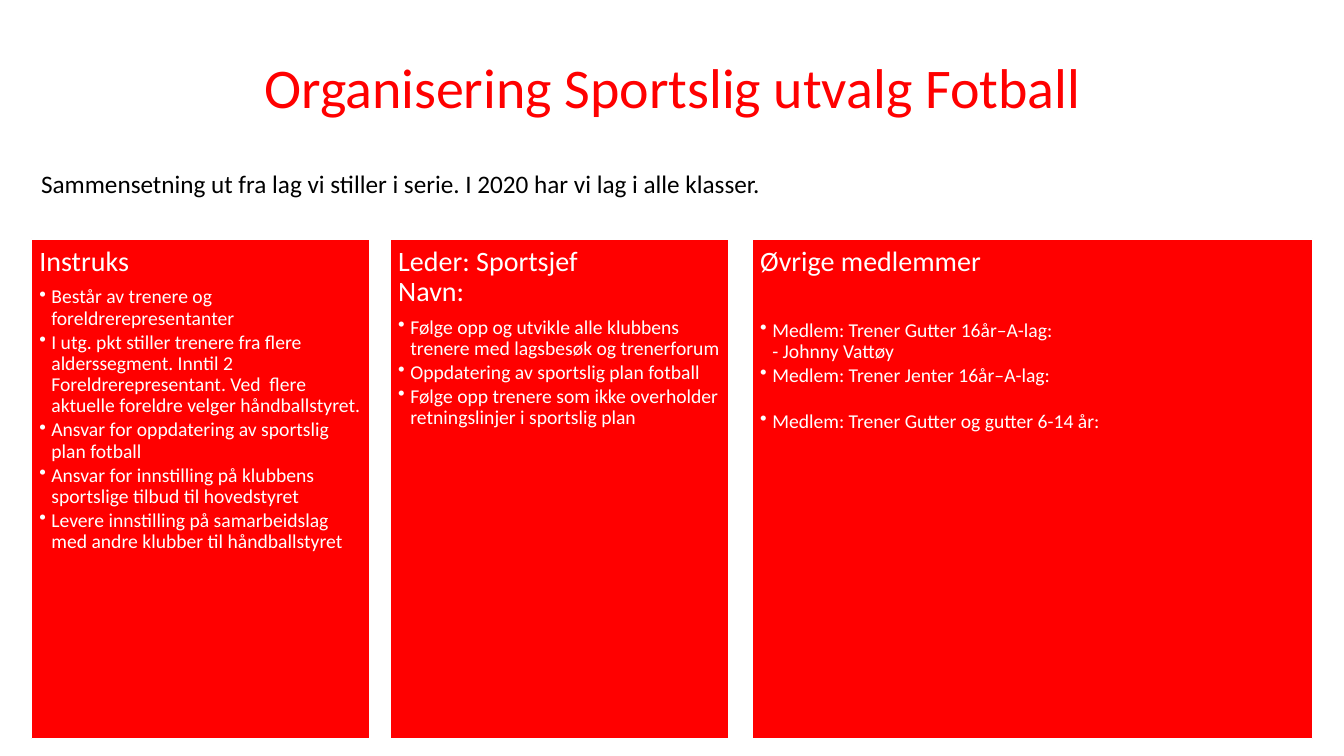
import pptx
import pptx.util
import pptx.dml.color
import pptx.enum.shapes
import pptx.enum.text
import pptx.oxml.ns
from lxml import etree

Inches, Pt = pptx.util.Inches, pptx.util.Pt
qn = pptx.oxml.ns.qn
ALIGN = pptx.enum.text.PP_ALIGN
ANCHOR = pptx.enum.text.MSO_ANCHOR

RED = pptx.dml.color.RGBColor(0xFF, 0x00, 0x00)
WHITE = pptx.dml.color.RGBColor(0xFF, 0xFF, 0xFF)
BLACK = pptx.dml.color.RGBColor(0x00, 0x00, 0x00)

PANEL_TOP, PANEL_HEIGHT = 2.37, 4.96
PANELS = [
    (0.31, 3.36, "Instruks", [
        "Består av trenere og foreldrerepresentanter",
        "I utg. pkt stiller trenere fra flere alderssegment. Inntil 2 "
        "Foreldrerepresentant. Ved  flere aktuelle foreldre velger håndballstyret.",
        "Ansvar for oppdatering av sportslig plan fotball",
        "Ansvar for innstilling på klubbens sportslige tilbud til hovedstyret",
        "Levere innstilling på samarbeidslag med andre klubber til håndballstyret",
    ]),
    (3.87, 3.36, "Leder: Sportsjef\nNavn:", [
        "Følge opp og utvikle alle klubbens trenere med lagsbesøk og trenerforum",
        "Oppdatering av sportslig plan fotball",
        "Følge opp trenere som ikke overholder retningslinjer i sportslig plan",
    ]),
    (7.46, 5.56, "Øvrige medlemmer\n", [
        "Medlem: Trener Gutter 16år–A-lag:\n- Johnny Vattøy",
        "Medlem: Trener Jenter 16år–A-lag:\n",
        "Medlem: Trener Gutter og gutter 6-14 år:",
    ]),
]


def write(paragraph, text, size, color, **layout):
    """Fill a paragraph; line breaks get the same size as the text."""
    paragraph.text = text
    for run in paragraph.runs:
        run.font.name = "Calibri"
        run.font.size = Pt(size)
        run.font.color.rgb = color
    for line_break in paragraph._p.findall(qn("a:br")):
        etree.SubElement(line_break, qn("a:rPr"), sz=str(size * 100))
    etree.SubElement(paragraph._p, qn("a:endParaRPr"), sz=str(size * 100))
    for key, value in layout.items():
        setattr(paragraph, key, value)


def add_bullet(paragraph):
    properties = paragraph._p.get_or_add_pPr()
    properties.set("marL", str(Inches(0.12)))
    properties.set("indent", str(-Inches(0.12)))
    etree.SubElement(properties, qn("a:buChar"), char="•")


deck = pptx.Presentation()
deck.slide_width, deck.slide_height = Inches(13.33), Inches(7.5)
slide = deck.slides.add_slide(deck.slide_layouts[6])

title = slide.shapes.add_textbox(
    Inches(0.92), Inches(0.17), Inches(11.5), Inches(1.45)).text_frame
title.word_wrap = True
title.vertical_anchor = ANCHOR.MIDDLE
write(title.paragraphs[0], "Organisering Sportslig utvalg Fotball", 40, RED,
      alignment=ALIGN.CENTER, line_spacing=0.9)

for left, width, heading, duties in PANELS:
    panel = slide.shapes.add_shape(
        pptx.enum.shapes.MSO_SHAPE.RECTANGLE,
        Inches(left), Inches(PANEL_TOP), Inches(width), Inches(PANEL_HEIGHT))
    panel.shadow.inherit = False
    panel.fill.solid()
    panel.fill.fore_color.rgb = RED
    panel.line.color.rgb = WHITE
    panel.line.width = Pt(1)

    body = panel.text_frame
    body.word_wrap = True
    body.vertical_anchor = ANCHOR.TOP
    for side in ("left", "top", "right", "bottom"):
        setattr(body, f"margin_{side}", Inches(0.08))
    write(body.paragraphs[0], heading, 20, WHITE,
          alignment=ALIGN.LEFT, line_spacing=0.9, space_after=Pt(7))
    for duty in duties:
        item = body.add_paragraph()
        write(item, duty, 14, WHITE, level=1,
              alignment=ALIGN.LEFT, line_spacing=0.9, space_after=Pt(2.1))
        add_bullet(item)

summary = slide.shapes.add_textbox(
    Inches(0.31), Inches(1.62), Inches(8.26), Inches(0.4)).text_frame
summary.word_wrap = True
summary.auto_size = pptx.enum.text.MSO_AUTO_SIZE.SHAPE_TO_FIT_TEXT
write(summary.paragraphs[0],
      "Sammensetning ut fra lag vi stiller i serie. I 2020 har vi lag i alle klasser.",
      18, BLACK)

deck.save("out.pptx")
